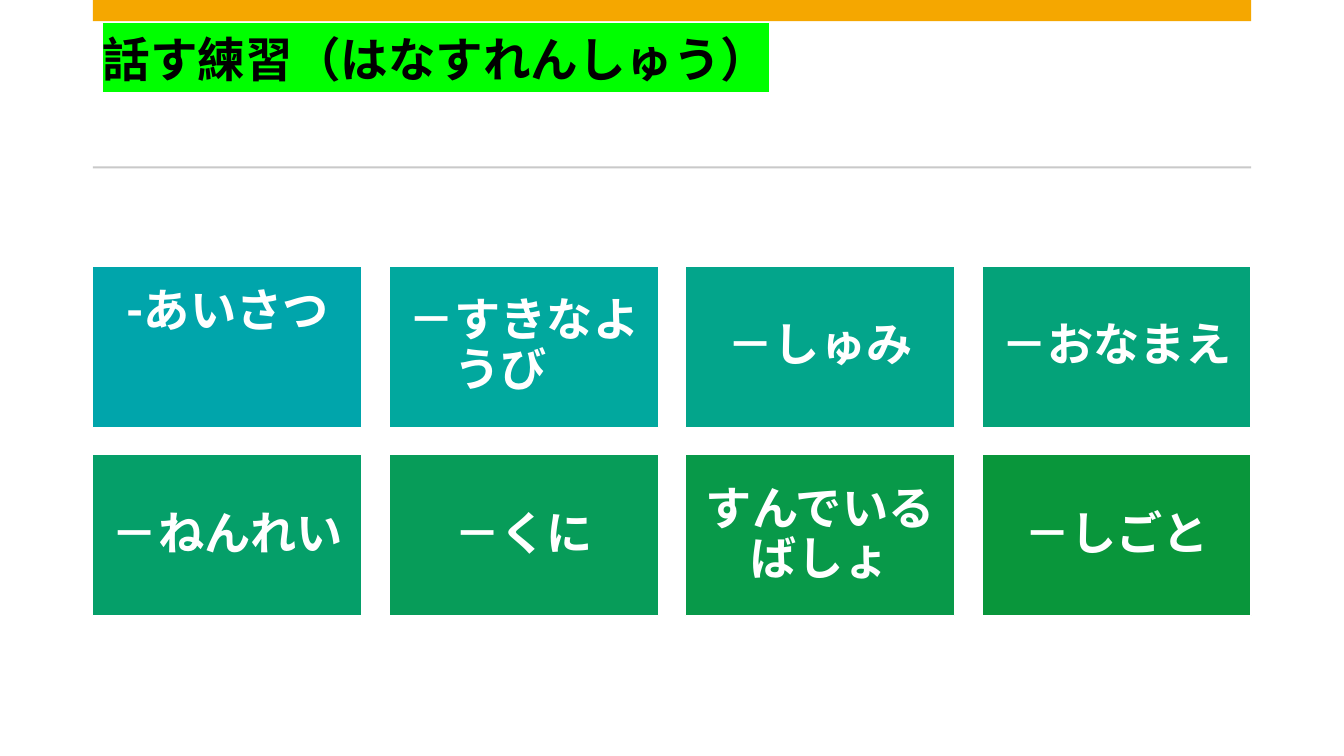
"""Build the Japanese speaking practice slide with its grid of eight topics."""
from lxml.etree import SubElement
from pptx import Presentation
from pptx.dml.color import RGBColor
from pptx.enum.shapes import MSO_SHAPE
from pptx.enum.text import MSO_ANCHOR, MSO_AUTO_SIZE, PP_ALIGN
from pptx.oxml.ns import qn
from pptx.util import Inches, Pt


def add_block(left, top, width, height, color):
    block = slide.shapes.add_shape(
        MSO_SHAPE.RECTANGLE, Inches(left), Inches(top), Inches(width), Inches(height))
    block.shadow.inherit = False
    block.fill.solid()
    block.fill.fore_color.rgb = RGBColor.from_string(color)
    block.line.fill.background()
    return block


def write_text(frame, text, size, color, align, frame_format):
    frame_format = {"word_wrap": True, "auto_size": MSO_AUTO_SIZE.NONE,
                    "vertical_anchor": MSO_ANCHOR.MIDDLE, **frame_format}
    for name, value in frame_format.items():
        setattr(frame, name, value)
    paragraph = frame.paragraphs[0]
    paragraph.alignment = align
    paragraph.line_spacing = 0.9
    run = paragraph.add_run()
    run.text = text
    for name, value in {"name": "Roboto", "size": Pt(size), "bold": True}.items():
        setattr(run.font, name, value)
    run.font.color.rgb = RGBColor.from_string(color)
    return run


presentation = Presentation()
presentation.slide_width = Inches(13.33)
presentation.slide_height = Inches(7.5)
slide = presentation.slides.add_slide(presentation.slide_layouts[5])

margin, content_width = 0.92, 11.49
heading = slide.shapes.title
heading_place = {"left": margin, "top": 0.37, "width": content_width, "height": 1.18}
for name, value in heading_place.items():
    setattr(heading, name, Inches(value))
heading_run = write_text(heading.text_frame, "話す練習（はなすれんしゅう）", 34, "000000",
                         PP_ALIGN.LEFT, {"margin_bottom": Inches(0.73)})
run_properties = heading_run.font._element
highlight = SubElement(run_properties, qn("a:highlight"))
SubElement(highlight, qn("a:srgbClr"), val="00FF00")
run_properties.find(qn("a:solidFill")).addnext(highlight)

add_block(margin, 0, content_width, 0.21, "F5A700")
add_block(margin, 1.65, content_width, 0.02, "C9C9C9")

topics = [
    ("-あいさつ", "00A5AB"), ("－すきなようび　", "01A89E"),
    ("－しゅみ", "03A58B"), ("－おなまえ", "04A279"),
    ("－ねんれい", "059F69"), ("－くに", "079C59"),
    ("すんでいるばしょ", "089949"), ("－しごと", "09963B"),
]
columns, tile_width, tile_height, gap = 4, 2.67, 1.6, 0.27
padding = {f"margin_{side}": Inches(0.14) for side in ("left", "right", "top", "bottom")}
raised_padding = {**padding, "margin_bottom": Inches(0.82)}

for index, (topic, color) in enumerate(topics):
    row, column = divmod(index, columns)
    tile = add_block(margin + column * (tile_width + gap), 2.64 + row * (tile_height + gap),
                     tile_width, tile_height, color)
    tile.line.color.rgb = RGBColor.from_string("FFFFFF")
    tile.line.width = Pt(1)
    write_text(tile.text_frame, topic, 33, "FFFFFF", PP_ALIGN.CENTER,
               raised_padding if index == 0 else padding)

presentation.save("out.pptx")
